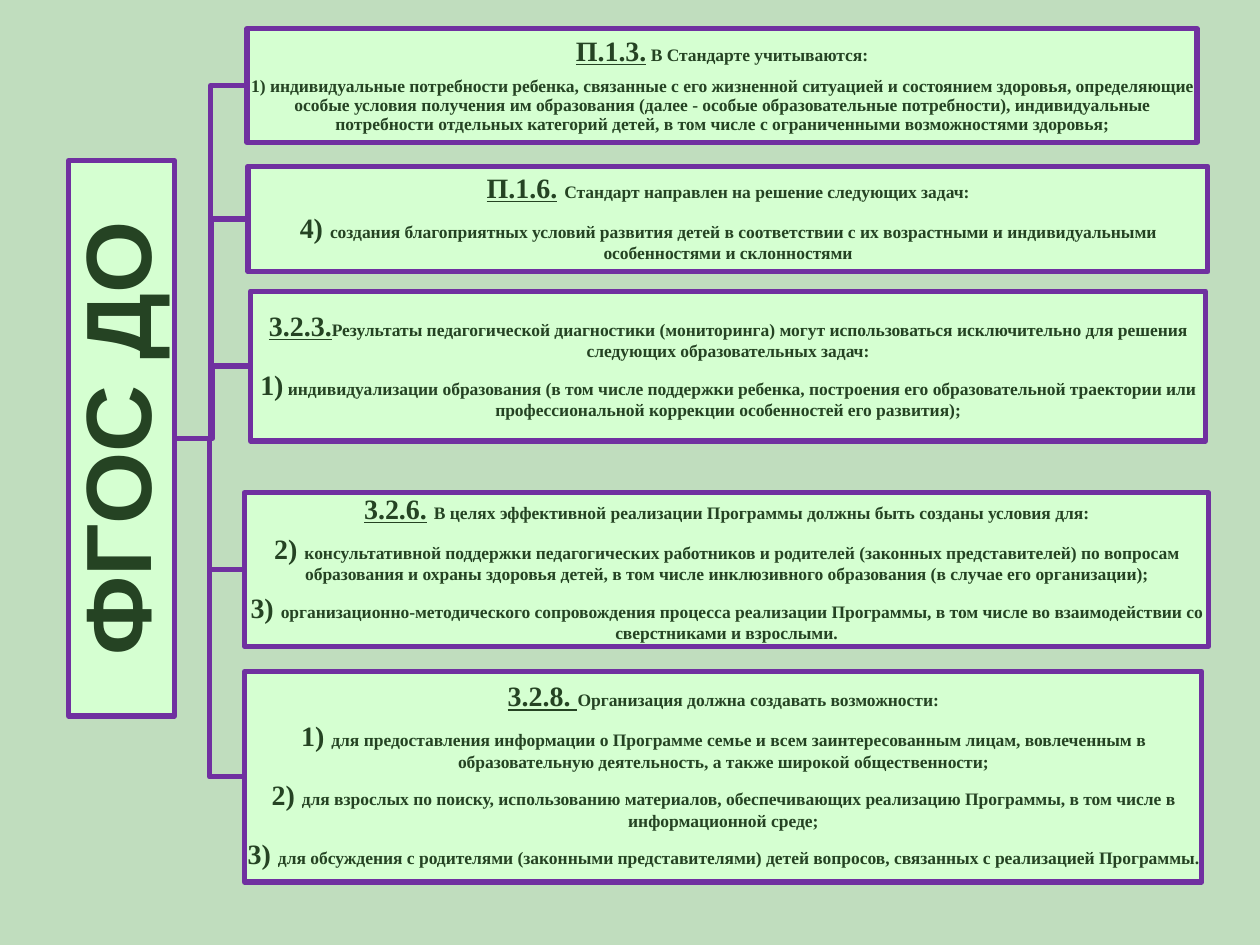
from pptx import Presentation
from pptx.dml.color import RGBColor
from pptx.enum.shapes import MSO_CONNECTOR as CONN, MSO_SHAPE as SHAPE
from pptx.enum.text import MSO_ANCHOR as ANCHOR, PP_ALIGN as ALIGN
from pptx.oxml.ns import qn
from pptx.util import Cm, Pt
from lxml.etree import SubElement

BACK, FILL, LINE, INK = "C0DDBE", "D5FFD1", "7030A0", "254323"
ROOT_TEXT = "ФГОС ДО"
ROOT_BOX = (-3.15, 7.77, 11.2, 2.13)
SECTIONS = [
    ((4.98, 0.58, 19.15, 2.29), [
        ("П.1.3.", "", " В Стандарте учитываются:"),
        ("", "", "1) индивидуальные потребности ребенка, связанные с его жизненной ситуацией и "
         "состоянием здоровья, определяющие особые условия получения им образования (далее - "
         "особые образовательные потребности), индивидуальные потребности отдельных категорий "
         "детей, в том числе с ограниченными возможностями здоровья;"),
    ]),
    ((5, 3.35, 19.35, 2.13), [
        ("П.1.6.", " ", "Стандарт направлен на решение следующих задач:"),
        ("4)", " ", "создания благоприятных условий развития детей в соответствии с их "
         "возрастными и индивидуальными особенностями и склонностями"),
    ]),
    ((5.05, 5.87, 19.25, 3.02), [
        ("3.2.3.", "", "Результаты педагогической диагностики (мониторинга) могут использоваться "
         "исключительно для решения следующих образовательных задач:"),
        ("1)", "", " индивидуализации образования (в том числе поддержки ребенка, построения его "
         "образовательной траектории или профессиональной коррекции особенностей его развития);"),
    ]),
    ((4.93, 9.93, 19.43, 3.1), [
        ("3.2.6.", " ", "В целях эффективной реализации Программы должны быть созданы условия для:"),
        ("2)", " ", "консультативной поддержки педагогических работников и родителей (законных "
         "представителей) по вопросам образования и охраны здоровья детей, в том числе "
         "инклюзивного образования (в случае его организации);"),
        ("3)", " ", "организационно-методического сопровождения процесса реализации Программы, "
         "в том числе во взаимодействии со сверстниками и взрослыми."),
    ]),
    ((4.93, 13.54, 19.3, 4.24), [
        ("3.2.8. ", "", "Организация должна создавать возможности:"),
        ("1)", " ", "для предоставления информации о Программе семье и всем заинтересованным лицам, "
         "вовлеченным в образовательную деятельность, а также широкой общественности;"),
        ("2)", " ", "для взрослых по поиску, использованию материалов, обеспечивающих реализацию "
         "Программы, в том числе в информационной среде;"),
        ("3)", " ", "для обсуждения с родителями (законными представителями) детей вопросов, "
         "связанных с реализацией Программы."),
    ]),
]
BODY = {"name": "Times New Roman", "size": Pt(10), "bold": True}
MARK = {**BODY, "size": Pt(16)}
HEAD = {**MARK, "underline": True}
ROOT = {"name": "Arial", "size": Pt(53), "bold": True}
PARA = {"alignment": ALIGN.CENTER, "line_spacing": 0.9}


def rgb(code):
    return RGBColor.from_string(code)


def apply(target, values):
    for name, value in values.items():
        setattr(target, name, value)


def add_box(shapes, box, paragraphs, inset):
    sp = shapes.add_shape(SHAPE.RECTANGLE, *map(Cm, box))
    sp.shadow.inherit = False
    sp.fill.solid()
    sp.fill.fore_color.rgb = rgb(FILL)
    sp.line.color.rgb = rgb(LINE)
    sp.line.width = Pt(3)
    tf = sp.text_frame
    sides = ("left", "top", "right", "bottom")
    apply(tf, {f"margin_{side}": Cm(inset) for side in sides})
    apply(tf, {"word_wrap": True, "vertical_anchor": ANCHOR.MIDDLE})
    for i, runs in enumerate(paragraphs):
        p = tf.paragraphs[0] if i == 0 else tf.add_paragraph()
        apply(p, PARA)
        p.space_after = Pt(max(font["size"].pt for text, font in runs if text) * 0.35)
        for text, font in runs:
            if text:
                r = p.add_run()
                r.text = text
                apply(r.font, font)
                r.font.color.rgb = rgb(INK)
    return sp


def add_branch(shapes, root, box):
    x = root.left + (root.width + root.height) // 2
    y = root.top + root.height // 2
    line = shapes.add_connector(CONN.ELBOW, x, y, box.left, box.top + box.height // 2)
    line.begin_connect(root, 2)
    apply(line, {"begin_x": x, "begin_y": y})
    line.end_connect(box, 1)
    line.line.color.rgb = rgb(LINE)
    line.line.width = Pt(3)
    SubElement(line._element.spPr, qn("a:effectLst"))


def main():
    prs = Presentation()
    apply(prs, {"slide_width": Cm(25.4), "slide_height": Cm(19.05)})
    s = prs.slides.add_slide(prs.slide_layouts[6])
    s.background.fill.solid()
    s.background.fill.fore_color.rgb = rgb(BACK)
    root = add_box(s.shapes, ROOT_BOX, [[(ROOT_TEXT, ROOT)]], 0.1)
    root.rotation = 270
    for box, rows in SECTIONS:
        paragraphs = [
            list(zip(row, (MARK if i else HEAD, MARK, BODY))) for i, row in enumerate(rows)
        ]
        add_branch(s.shapes, root, add_box(s.shapes, box, paragraphs, 0.03))
    prs.save("out.pptx")


if __name__ == "__main__":
    main()
